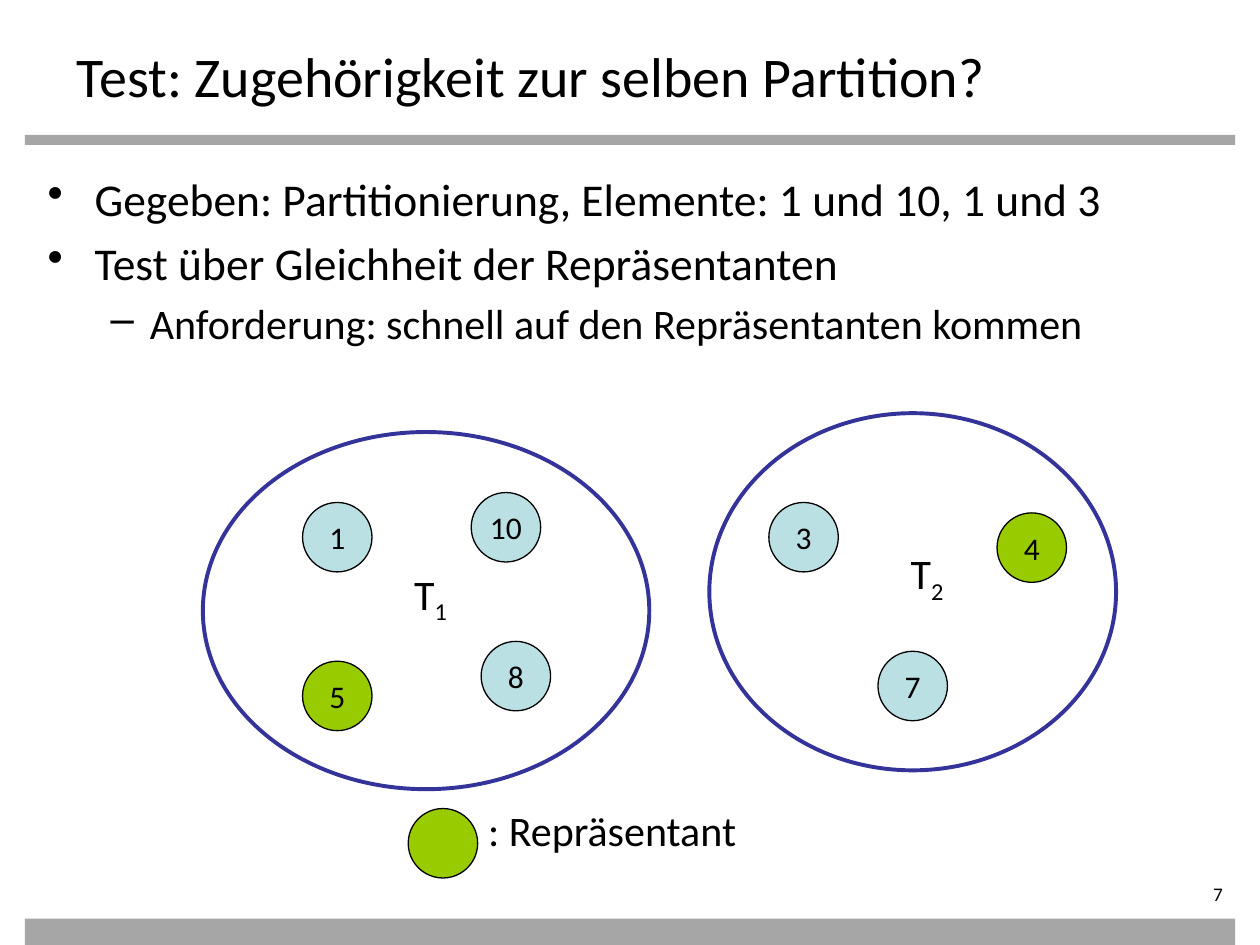
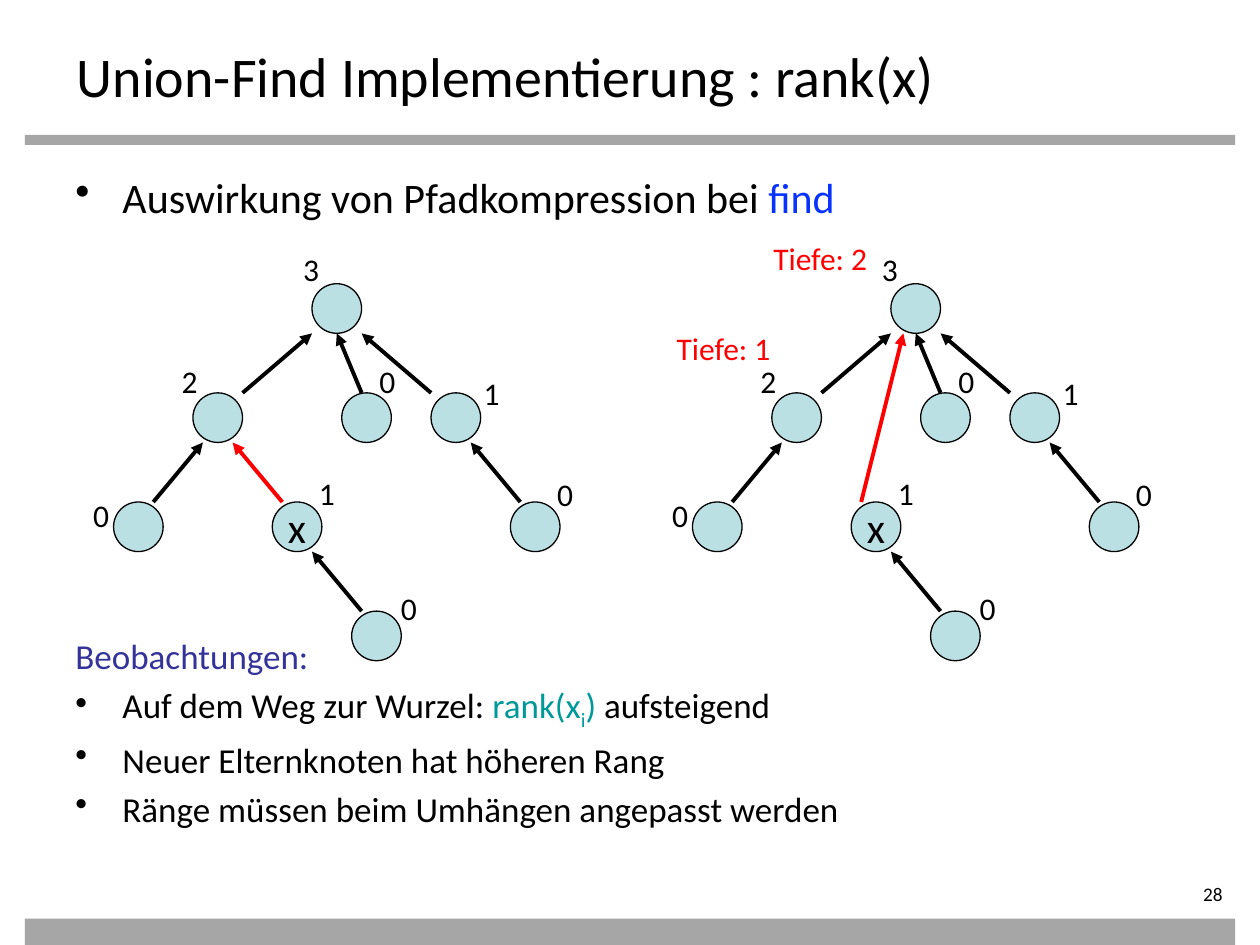
"""Builds two slides on union-find: partition test and rank under path compression."""
from lxml import etree
from pptx import Presentation
from pptx.dml.color import RGBColor
from pptx.enum import shapes, text
from pptx.oxml import ns
from pptx.util import Cm, Pt

FONT = "Calibri"
BLACK = RGBColor(0x00, 0x00, 0x00)
GREY = RGBColor(0xA6, 0xA6, 0xA6)
AQUA = RGBColor(0xBB, 0xE0, 0xE3)
GREEN = RGBColor(0x99, 0xCC, 0x00)
INDIGO = RGBColor(0x33, 0x33, 0x99)
BLUE = RGBColor(0x08, 0x33, 0xFF)
TEAL = RGBColor(0x00, 0x99, 0x99)
RED = RGBColor(0xFF, 0x00, 0x00)

BANDS = [(0.5, 2.72, 24.4, 0.2), (0.5, 18.52, 24.4, 0.53)]
BULLETS = {"•": (0.95, 0.95), "–": (2.06, 0.79), "": (0, 0)}

PARTITION_TITLE = "Test: Zugehörigkeit zur selben Partition?"
PARTITION_POINTS = [
    ("•", 26, ["Gegeben: Partitionierung, Elemente: 1 und 10, 1 und 3"]),
    ("•", 26, ["Test über Gleichheit der Repräsentanten"]),
    ("–", 24, ["Anforderung: schnell auf den Repräsentanten kommen"]),
]
ELEMENT_SIZE = 1.4
ELEMENTS = [
    ("1", 6.1, 10.13, AQUA), ("10", 9.5, 9.93, AQUA), ("8", 9.7, 12.93, AQUA),
    ("5", 6.1, 13.33, GREEN), ("3", 15.5, 10.13, AQUA), ("7", 17.7, 13.13, AQUA),
    ("4", 20.1, 10.34, GREEN), ("", 8.23, 16.3, GREEN),
]
SETS = [
    ("1", (4.09, 8.71, 9, 7.2), (8.1, 11.33)),
    ("2", (14.3, 8.33, 8.2, 7.2), (18.11, 10.92)),
]

RANK_TITLE = "Union-Find Implementierung : rank(x)"
RANK_POINTS = [("•", 24, ["Auswirkung von Pfadkompression bei ", ("find", BLUE)])]
OBSERVATIONS = [
    ("", 20, [("Beobachtungen:", INDIGO)]),
    ("•", 20, ["Auf dem Weg zur Wurzel: ", ("rank(x", TEAL), ("i", TEAL, True), (")", TEAL),
               " aufsteigend"]),
    ("•", 20, ["Neuer Elternknoten hat höheren Rang"]),
    ("•", 20, ["Ränge müssen beim Umhängen angepasst werden"]),
]
NODE_SIZE = 1
COLUMN_STEP, LEVEL_STEP = 0.8, 2.2
TREE_TOP = 5.72
TREE_LEFTS = [2.29, 13.96]
# name: column, level, rank, offset of the rank label
NODES = {
    "root": (5, 0, "3", (-0.43, -0.81)),
    "left": (2, 1, "2", (-0.48, -0.74)),
    "middle": (5.75, 1, "0", (0.51, -0.74)),
    "right": (8, 1, "1", (0.81, -0.51)),
    "left leaf": (0, 2, "0", (-0.66, -0.25)),
    "x": (4, 2, "1", (0.69, -0.69)),
    "right leaf": (10, 2, "0", (0.69, -0.66)),
    "x leaf": (6, 3, "0", (0.74, -0.58)),
}
EDGES = [
    ("left", 1, "root", 0), ("middle", 0.4, "root", 0.5), ("right", 0, "root", 1),
    ("left leaf", 0.8, "left", 0.2), ("x leaf", 0.2, "x", 0.8),
    ("right leaf", 0.2, "right", 0.8),
]
X_EDGES = [("x", 0.2, "left", 0.8), ("x", 0.2, "root", 0.25)]
DEPTHS = [("Tiefe: 1", 13.39, 6.5), ("Tiefe: 2", 15.34, 4.7)]


def write(para, spans, size):
    """Fill a paragraph with spans given as text or (text, colour, subscript)."""
    for span in spans:
        words, colour, subscript = (*((span,) if isinstance(span, str) else span), BLACK, False)[:3] \
            if isinstance(span, str) or len(span) < 3 else span
        run = para.add_run()
        run.text = words
        run.font.name, run.font.size = FONT, Pt(size)
        run.font.color.rgb = colour
        if subscript is True:
            run._r.get_or_add_rPr().set("baseline", "-25000")


def add_text(page, place, spans, size, wrap=False):
    """Add a one-paragraph text box."""
    box = page.shapes.add_textbox(*map(Cm, place))
    box.text_frame.word_wrap = wrap
    write(box.text_frame.paragraphs[0], spans, size)
    return box


def add_points(page, place, points):
    """Add a list of bulleted paragraphs."""
    frame = page.shapes.add_textbox(*map(Cm, place)).text_frame
    frame.word_wrap = True
    for index, (bullet, size, spans) in enumerate(points):
        para = frame.add_paragraph() if index else frame.paragraphs[0]
        if index:
            para.space_before = Pt(size * 0.2)
        if bullet:
            margin, hanging = BULLETS[bullet]
            properties = para._p.get_or_add_pPr()
            properties.set("marL", str(Cm(margin)))
            properties.set("indent", str(-Cm(hanging)))
            etree.SubElement(properties, ns.qn("a:buChar")).set("char", bullet)
        write(para, spans, size)


def add_shape(page, kind, place, fill=None, line=None, width=0.75):
    """Add a flat preset shape."""
    shape = page.shapes.add_shape(kind, *map(Cm, place))
    shape.shadow.inherit = False
    if fill is None:
        shape.fill.background()
    else:
        shape.fill.solid()
        shape.fill.fore_color.rgb = fill
    if line is None:
        shape.line.fill.background()
    else:
        shape.line.color.rgb, shape.line.width = line, Pt(width)
    return shape


def add_circle(page, left, top, diameter, fill, label, size):
    """Add a circle with an optional centred label."""
    circle = add_shape(page, shapes.MSO_SHAPE.OVAL, (left, top, diameter, diameter), fill, BLACK)
    if label:
        frame = circle.text_frame
        frame.word_wrap = False
        frame.vertical_anchor = text.MSO_ANCHOR.MIDDLE
        frame.paragraphs[0].alignment = text.PP_ALIGN.CENTER
        write(frame.paragraphs[0], [label], size)


def add_arrow(page, start, end, colour):
    """Add a line with a triangle at its end."""
    arrow = page.shapes.add_connector(shapes.MSO_CONNECTOR.STRAIGHT, *map(Cm, (*start, *end)))
    arrow.line.color.rgb, arrow.line.width = colour, Pt(2.25)
    etree.SubElement(arrow.line._get_or_add_ln(), ns.qn("a:tailEnd")).set("type", "triangle")
    etree.SubElement(arrow._element.spPr, ns.qn("a:effectLst"))


def add_page(deck, title, number):
    """Add a blank page with bands, title and page number."""
    page = deck.slides.add_slide(deck.slide_layouts[6])
    for band in BANDS:
        add_shape(page, shapes.MSO_SHAPE.RECTANGLE, band, GREY)
    add_text(page, (1.3, 0.71, 22.86, 1.4), [title], 32, wrap=True)
    frame = add_text(page, (22.1, 17.78, 2.8, 0.56), [number], 11, wrap=True).text_frame
    frame.margin_left = frame.margin_top = frame.margin_bottom = 0
    frame.paragraphs[0].alignment = text.PP_ALIGN.RIGHT
    return page


def add_partition_page(deck):
    """Show two sets and their representatives."""
    page = add_page(deck, PARTITION_TITLE, "7")
    add_points(page, (0.71, 3.33, 24.13, 5), PARTITION_POINTS)
    for label, left, top, fill in ELEMENTS:
        add_circle(page, left, top, ELEMENT_SIZE, fill, label, 18)
    add_text(page, (9.59, 16.1, 5.6, 1.27), [": Repräsentant"], 24)
    for index, outline, corner in SETS:
        add_shape(page, shapes.MSO_SHAPE.OVAL, outline, None, INDIGO, 2.25)
        add_text(page, (*corner, 1.22, 1.27), ["T", (index, BLACK, True)], 24)


def add_tree(page, left, x_edge):
    """Draw one ranked tree with the edge of x in red."""
    corners = {name: (left + column * COLUMN_STEP, TREE_TOP + level * LEVEL_STEP)
               for name, (column, level, *_) in NODES.items()}
    for name, (x, y) in corners.items():
        add_circle(page, x, y, NODE_SIZE, AQUA, "x" if name == "x" else "", 24)
        rank, (shift_x, shift_y) = NODES[name][2:]
        add_text(page, (x + shift_x, y + shift_y, 0.86, 1.02), [rank], 18)
    for edge in [*EDGES, x_edge]:
        child, child_shift, parent, parent_shift = edge
        (child_x, child_y), (parent_x, parent_y) = corners[child], corners[parent]
        add_arrow(page, (child_x + child_shift, child_y),
                  (parent_x + parent_shift, parent_y + NODE_SIZE),
                  RED if edge is x_edge else BLACK)


def add_rank_page(deck):
    """Show the tree before and after path compression."""
    page = add_page(deck, RANK_TITLE, "28")
    add_points(page, (1.27, 3.33, 22.86, 1.3), RANK_POINTS)
    add_points(page, (1.27, 12.67, 22.86, 4.4), OBSERVATIONS)
    for left, x_edge in zip(TREE_LEFTS, X_EDGES):
        add_tree(page, left, x_edge)
    for depth, left, top in DEPTHS:
        add_text(page, (left, top, 2.41, 1.02), [(depth, RED)], 18)


def main():
    """Build and save the deck."""
    deck = Presentation()
    deck.slide_width, deck.slide_height = Cm(25.4), Cm(19.05)
    add_partition_page(deck)
    add_rank_page(deck)
    deck.save("out.pptx")


if __name__ == "__main__":
    main()
